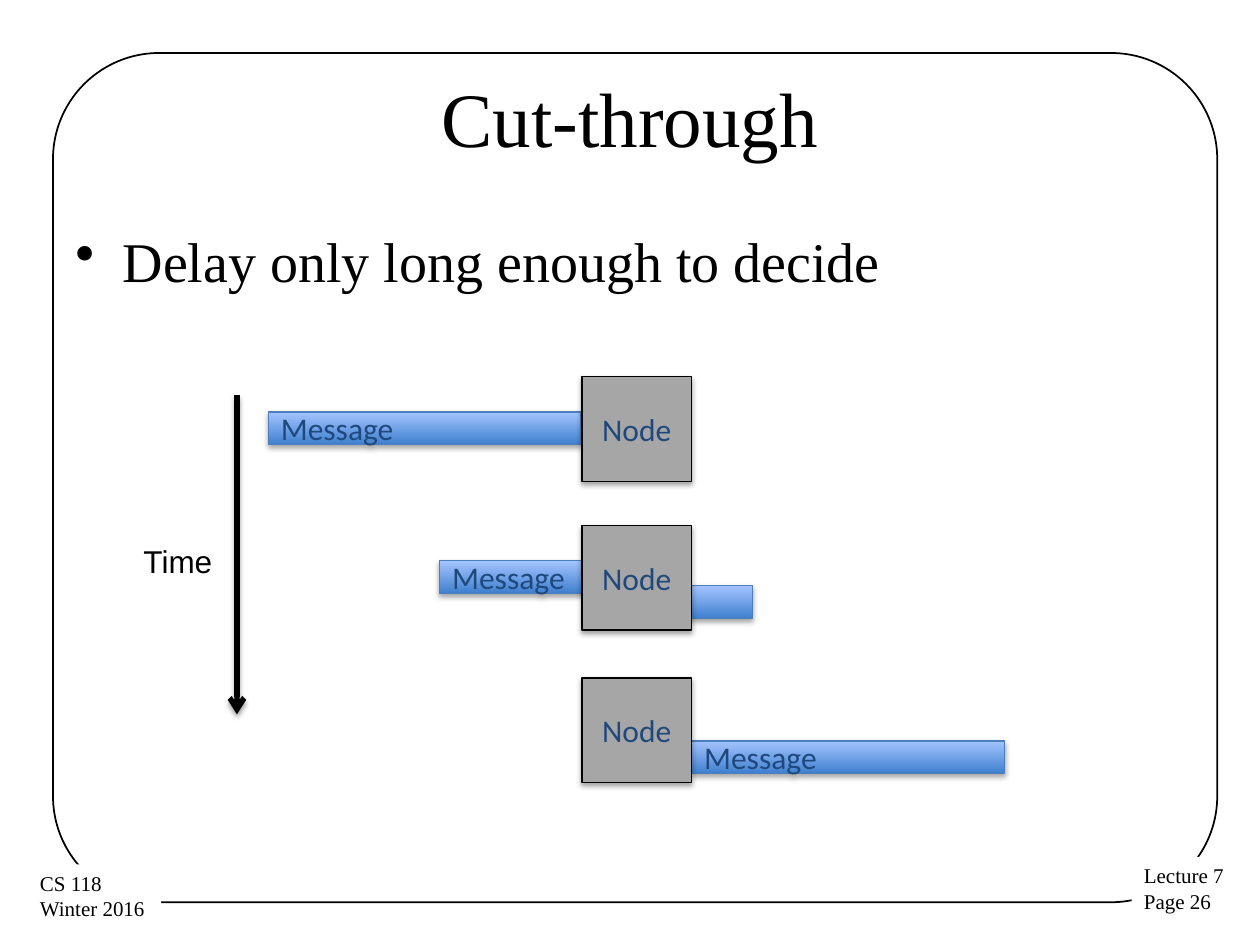
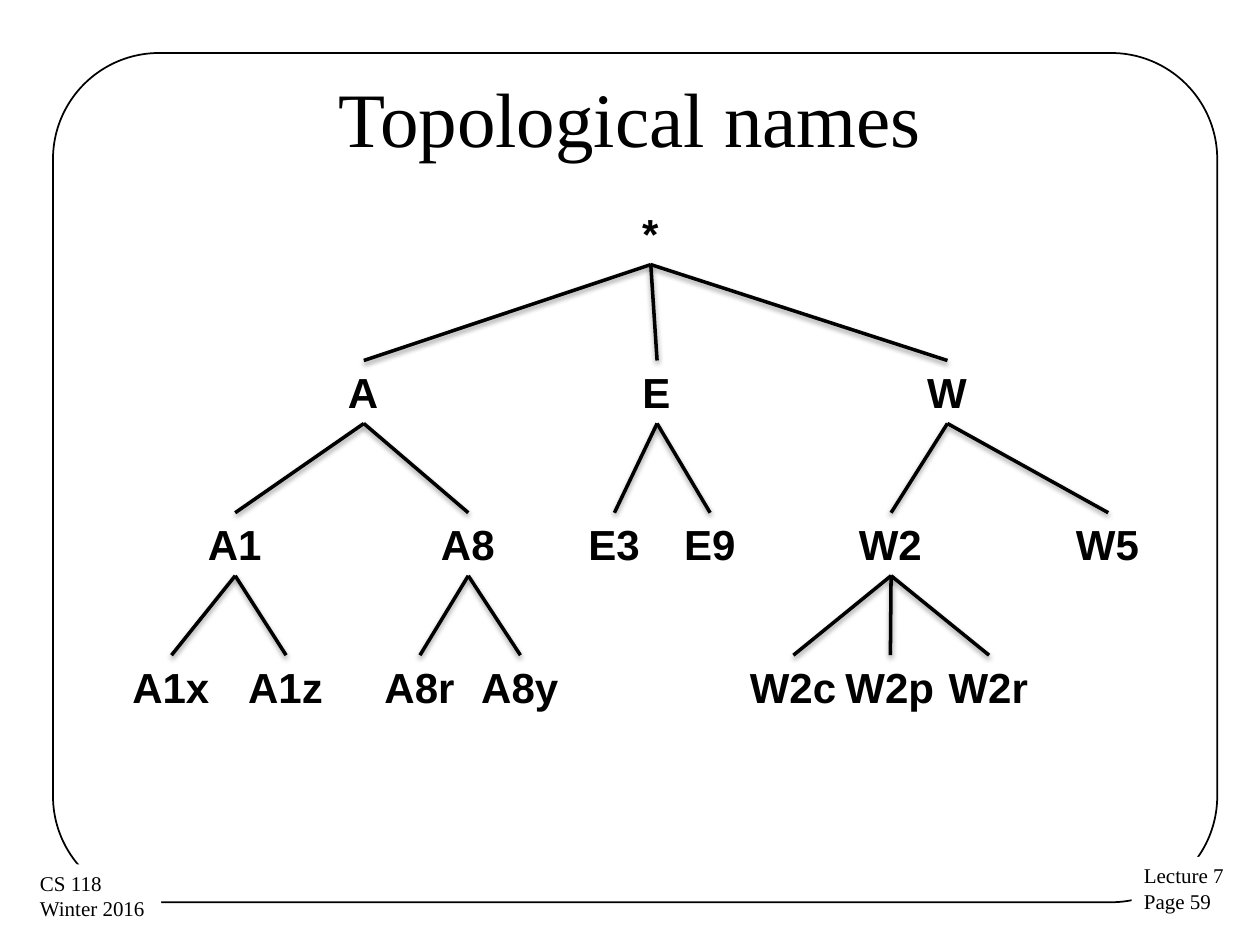
from dataclasses import dataclass
from lxml.etree import SubElement
from pptx import Presentation
from pptx.dml.color import RGBColor
from pptx.enum.shapes import MSO_CONNECTOR, MSO_SHAPE
from pptx.enum.text import MSO_ANCHOR, MSO_AUTO_SIZE, PP_ALIGN
from pptx.oxml.ns import qn
from pptx.util import Pt

BLACK, WHITE = "000000", "FFFFFF"
NODE_GREY, TEXT_BLUE = "A6A6A6", "1F497D"
BAR_DARK, BAR_LIGHT, BAR_EDGE = "3F80CE", "A4C4FF", "4B7EBC"
SERIF, SANS, LABEL = "Times New Roman", "Arial", "Calibri"

BAR_H, FULL_MESSAGE = 18.7, 178.6
NODE_X, NODE_W, NODE_H = 332.6, 62.6, 59.8
NODE_TOPS = (215.3, 300.2, 387.4)
LEVEL_TOPS = (115.2, 206, 293, 374.4)
NAME_H = 36


@dataclass(frozen=True)
class Bar:
    x: float
    y: float
    share: float  # visible part of a full message
    text: str = ""


@dataclass(frozen=True)
class Name:
    text: str
    centre: float
    width: float
    children: tuple["Name", ...] = ()


BARS = (
    Bar(251.3, 320.4, 0.75, "Message"),
    Bar(153.4, 235.4, 1, "Message"),
    Bar(395.3, 423.4, 1, "Message"),
    Bar(340.6, 334.8, 0.5),
)

NAMES = Name("*", 371.9, 24, (
    Name("A", 207.9, 32.4, (
        Name("A1", 134.4, 45.4, (Name("A1x", 98, 59), Name("A1z", 163.5, 57.6))),
        Name("A8", 267.6, 45.4, (Name("A8r", 240, 54.7), Name("A8y", 297.4, 59))),
    )),
    Name("E", 375.5, 31, (Name("E3", 351.1, 44), Name("E9", 405.8, 44))),
    Name("W", 541.4, 37.4, (
        Name("W2", 509.2, 51.1, (
            Name("W2c", 453.4, 64), Name("W2p", 508.8, 65.5), Name("W2r", 565.2, 60.5),
        )),
        Name("W5", 633.3, 51.1),
    )),
))


def rgb(value: str) -> RGBColor:
    return RGBColor.from_string(value)


def write(shape, lines: tuple[str, ...], size: float, font: str, colour: str = BLACK,
          bold: bool = False, align=PP_ALIGN.LEFT, anchor=MSO_ANCHOR.TOP,
          wrap: bool = True) -> None:
    tf = shape.text_frame
    tf.word_wrap = wrap
    tf.vertical_anchor = anchor
    if not wrap:
        tf.auto_size = MSO_AUTO_SIZE.SHAPE_TO_FIT_TEXT
    for i, line in enumerate(lines):
        p = tf.add_paragraph() if i else tf.paragraphs[0]
        p.text, p.alignment = line, align
        p.font.size, p.font.name, p.font.bold = Pt(size), font, bold
        p.font.color.rgb = rgb(colour)


def add_text(slide, x: float, y: float, w: float, h: float, *lines: str, **style):
    box = slide.shapes.add_textbox(Pt(x), Pt(y), Pt(w), Pt(h))
    write(box, lines, **style)
    return box


def add_box(slide, x: float, y: float, w: float, h: float, fill: str | None,
            line: str | None, width: float = 0.75, kind=MSO_SHAPE.RECTANGLE):
    sp = slide.shapes.add_shape(kind, Pt(x), Pt(y), Pt(w), Pt(h))
    sp.shadow.inherit = False
    if fill:
        sp.fill.solid()
        sp.fill.fore_color.rgb = rgb(fill)
    else:
        sp.fill.background()
    if line:
        sp.line.color.rgb = rgb(line)
        sp.line.width = Pt(width)
    else:
        sp.line.fill.background()
    return sp


def cast_shadow(shape, alpha: int, distance: float) -> None:
    """Give the shape a soft shadow straight below it."""
    props = shape._element.spPr
    effects = props.find(qn("a:effectLst"))
    if effects is None:
        effects = SubElement(props, qn("a:effectLst"))
    shadow = SubElement(effects, qn("a:outerShdw"), blurRad=str(Pt(3.1)),
                        dist=str(Pt(distance)), dir="5400000", rotWithShape="0")
    colour = SubElement(shadow, qn("a:srgbClr"), val=BLACK)
    SubElement(colour, qn("a:alpha"), val=str(alpha * 1000))


def add_line(slide, x1: float, y1: float, x2: float, y2: float, width: float):
    line = slide.shapes.add_connector(MSO_CONNECTOR.STRAIGHT, Pt(x1), Pt(y1), Pt(x2), Pt(y2))
    line.line.color.rgb = rgb(BLACK)
    line.line.width = Pt(width)
    cast_shadow(line, 38, 1.6)
    return line


def add_base(prs, title: str, page: int):
    """Start a slide with the frame, the footers and the title."""
    slide = prs.slides.add_slide(prs.slide_layouts[6])
    frame = add_box(slide, 30.3, 30.3, 665.3, 485.3, None, BLACK, 1, MSO_SHAPE.ROUNDED_RECTANGLE)
    frame.adjustments[0] = 0.125
    for x, y, w, lines in (
        (646.6, 489.6, 60.5, ("Lecture 7", f"Page {page}")),
        (15.8, 493.9, 76.3, ("CS 118", "Winter 2016")),
    ):
        footer = add_box(slide, x, y, w, 36.7, WHITE, None)
        write(footer, lines, 12, SERIF, wrap=False)
    add_text(slide, 36, 21.6, 648, 90, title, size=44, font=SERIF,
             align=PP_ALIGN.CENTER, anchor=MSO_ANCHOR.MIDDLE)
    return slide


def add_bullet(slide, text: str) -> None:
    box = add_text(slide, 36, 126, 648, 356.4, text, size=32, font=SERIF)
    p = box.text_frame.paragraphs[0]
    p.space_before = Pt(3.6)
    props = p._p.get_or_add_pPr()
    props.set("marL", str(Pt(27)))
    props.set("indent", str(-Pt(27)))
    bullet = props.makeelement(qn("a:buChar"), {"char": "•"})
    props.insert_element_before(bullet, "a:tabLst", "a:defRPr", "a:extLst")


def add_message(slide, bar: Bar) -> None:
    sp = add_box(slide, bar.x, bar.y, FULL_MESSAGE * bar.share, BAR_H, None, BAR_EDGE)
    sp.fill.gradient()
    sp.fill.gradient_angle = 90
    for stop, colour in zip(sp.fill.gradient_stops, (BAR_DARK, BAR_LIGHT)):
        stop.color.rgb = rgb(colour)
    cast_shadow(sp, 35, 1.8)
    if bar.text:
        write(sp, (bar.text,), 18, LABEL, TEXT_BLUE, anchor=MSO_ANCHOR.MIDDLE)


def add_node(slide, y: float) -> None:
    sp = add_box(slide, NODE_X, y, NODE_W, NODE_H, NODE_GREY, BLACK)
    cast_shadow(sp, 35, 1.8)
    write(sp, ("Node",), 18, LABEL, TEXT_BLUE, align=PP_ALIGN.CENTER, anchor=MSO_ANCHOR.MIDDLE)


def add_name(slide, name: Name, level: int = 0):
    """Draw a name with everything below it, and return its box."""
    box = add_text(slide, name.centre - name.width / 2, LEVEL_TOPS[level], name.width, NAME_H,
                   name.text, size=24, font=SANS, bold=True, wrap=False)
    for child in name.children:
        child_box = add_name(slide, child, level + 1)
        edge = add_line(slide, child.centre, LEVEL_TOPS[level + 1],
                        name.centre, LEVEL_TOPS[level] + NAME_H, 2)
        edge.begin_connect(child_box, 0)
        edge.end_connect(box, 2)
    return box


def cut_through(prs) -> None:
    slide = add_base(prs, "Cut-through", 26)
    add_bullet(slide, "Delay only long enough to decide")
    for bar in BARS:
        add_message(slide, bar)
    for top in NODE_TOPS:
        add_node(slide, top)
    arrow = add_line(slide, 135.4, 226, 135.4, 408.2, 3)
    SubElement(arrow.line._get_or_add_ln(), qn("a:tailEnd"), type="arrow")
    add_text(slide, 74.9, 306, 54, 28.8, "Time", size=18, font=SANS, wrap=False)


def topological_names(prs) -> None:
    slide = add_base(prs, "Topological names", 59)
    add_name(slide, NAMES)


def main() -> None:
    prs = Presentation()
    prs.slide_width, prs.slide_height = Pt(720), Pt(540)
    cut_through(prs)
    topological_names(prs)
    prs.save("out.pptx")


if __name__ == "__main__":
    main()
